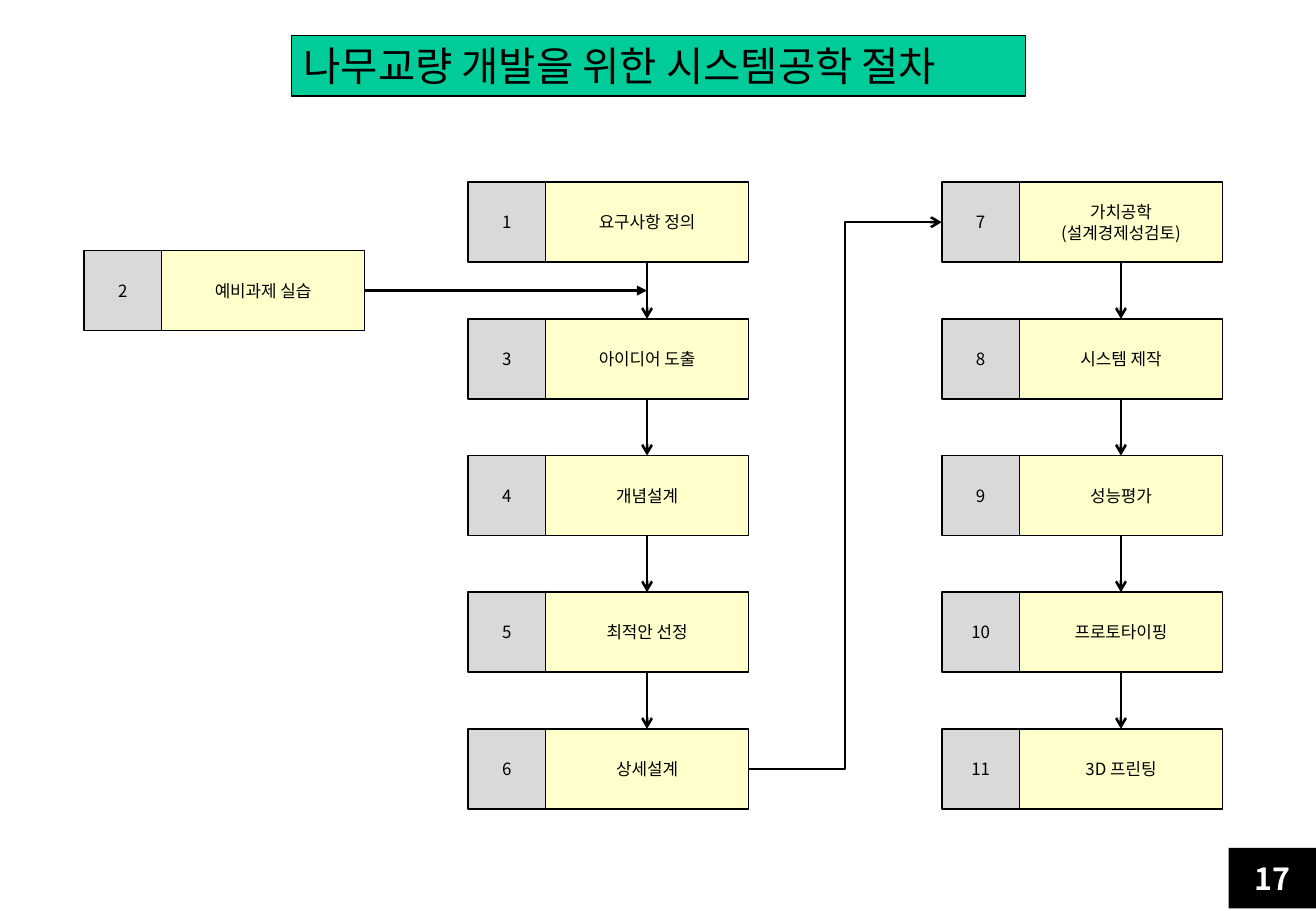
from pptx import Presentation
from pptx.dml.color import RGBColor
from pptx.enum.shapes import MSO_CONNECTOR, MSO_SHAPE
from pptx.enum.text import MSO_ANCHOR, PP_ALIGN
from pptx.oxml.ns import qn
from pptx.util import Inches, Pt
from lxml.etree import SubElement

COLORS = {"black": "000000", "white": "FFFFFF", "title": "00CC99",
          "label": "FFFFCC", "number": "D9D9D9"}
FONT = "Noto Sans CJK KR"

presentation = Presentation()
presentation.slide_width = Inches(10.83)
presentation.slide_height = Inches(7.5)
slide = presentation.slides.add_slide(presentation.slide_layouts[6])


def add_box(kind, left, top, width, height, lines, fill, size,
            line_width=None, margins=(0.1, 0.05), color="black",
            bold=False, align=PP_ALIGN.CENTER):
    shape = slide.shapes.add_shape(kind, Inches(left), Inches(top),
                                   Inches(width), Inches(height))
    shape.shadow.inherit = False
    shape.fill.solid()
    shape.fill.fore_color.rgb = RGBColor.from_string(COLORS[fill])
    if line_width:
        shape.line.color.rgb = RGBColor.from_string(COLORS["black"])
        shape.line.width = Pt(line_width)
    else:
        shape.line.fill.background()
    frame = shape.text_frame
    frame.word_wrap = True
    frame.vertical_anchor = MSO_ANCHOR.MIDDLE
    frame.margin_left = frame.margin_right = Inches(margins[0])
    frame.margin_top = frame.margin_bottom = Inches(margins[1])
    for index, text in enumerate(lines):
        paragraph = frame.add_paragraph() if index else frame.paragraphs[0]
        paragraph.alignment = align
        run = paragraph.add_run()
        run.text = text
        run.font.size = Pt(size)
        run.font.bold = bold
        run.font.name = FONT
        run.font.color.rgb = RGBColor.from_string(COLORS[color])
        SubElement(run.font._element, qn("a:ea")).set("typeface", FONT)
    return shape


def add_arrow(kind, start, end, head="arrow"):
    connector = slide.shapes.add_connector(
        kind, *(Inches(value) for value in (*start, *end)))
    connector.line.color.rgb = RGBColor.from_string(COLORS["black"])
    connector.line.width = Pt(1.5)
    SubElement(connector.line._get_or_add_ln(), qn("a:tailEnd")).set("type", head)
    SubElement(connector._element.spPr, qn("a:effectLst"))
    return connector


# Title and page number
add_box(MSO_SHAPE.RECTANGLE, 2.4, 0.29, 6.04, 0.5,
        ["나무교량 개발을 위한 시스템공학 절차"], "title", 24,
        line_width=0.75, align=PP_ALIGN.LEFT)
add_box(MSO_SHAPE.RECTANGLE, 10.11, 6.98, 0.72, 0.5, ["17"], "black", 18,
        color="white", bold=True)

# Process steps: number, column left, row, label lines
PRACTICE_LEFT, DESIGN_LEFT, BUILD_LEFT = 0.69, 3.85, 7.75
FIRST_TOP, ROW_PITCH, STEP_HEIGHT = 1.5, 1.125, 0.66
NUMBER_WIDTH, LABEL_WIDTH = 0.64, 1.67
STEP_WIDTH = NUMBER_WIDTH + LABEL_WIDTH
steps = [
    (1, DESIGN_LEFT, 0, ["요구사항 정의"]),
    (2, PRACTICE_LEFT, 0.5, ["예비과제 실습"]),
    (3, DESIGN_LEFT, 1, ["아이디어 도출"]),
    (4, DESIGN_LEFT, 2, ["개념설계"]),
    (5, DESIGN_LEFT, 3, ["최적안 선정"]),
    (6, DESIGN_LEFT, 4, ["상세설계"]),
    (7, BUILD_LEFT, 0, ["가치공학", "(설계경제성검토)"]),
    (8, BUILD_LEFT, 1, ["시스템 제작"]),
    (9, BUILD_LEFT, 2, ["성능평가"]),
    (10, BUILD_LEFT, 3, ["프로토타이핑"]),
    (11, BUILD_LEFT, 4, ["3D 프린팅"]),
]
labels, numbers = {}, {}
for number, left, row, lines in steps:
    top = FIRST_TOP + row * ROW_PITCH
    labels[number] = add_box(
        MSO_SHAPE.FLOWCHART_PROCESS, left + NUMBER_WIDTH, top, LABEL_WIDTH,
        STEP_HEIGHT, lines, "label", 10, line_width=1, margins=(0.04, 0.04))
    numbers[number] = add_box(
        MSO_SHAPE.FLOWCHART_PROCESS, left, top, NUMBER_WIDTH, STEP_HEIGHT,
        [str(number)], "number", 10, line_width=1, margins=(0, 0.04))

# Downward arrows within the two columns
for column_left, sequence in ((DESIGN_LEFT, (1, 3, 4, 5, 6)),
                              (BUILD_LEFT, (7, 8, 9, 10, 11))):
    center = column_left + NUMBER_WIDTH + LABEL_WIDTH / 2
    for row, (upper, lower) in enumerate(zip(sequence, sequence[1:])):
        top = FIRST_TOP + row * ROW_PITCH
        arrow = add_arrow(MSO_CONNECTOR.STRAIGHT, (center, top + STEP_HEIGHT),
                          (center, top + ROW_PITCH))
        arrow.begin_connect(labels[upper], 2)
        arrow.end_connect(labels[lower], 0)

# Practice step feeding the first downward arrow
first_middle = FIRST_TOP + STEP_HEIGHT / 2
practice_middle = first_middle + ROW_PITCH / 2
arrow = add_arrow(MSO_CONNECTOR.STRAIGHT,
                  (PRACTICE_LEFT + STEP_WIDTH, practice_middle),
                  (DESIGN_LEFT + NUMBER_WIDTH + LABEL_WIDTH / 2, practice_middle),
                  head="triangle")
arrow.begin_connect(labels[2], 3)

# Bent arrow from the design column to the build column
arrow = add_arrow(MSO_CONNECTOR.ELBOW,
                  (DESIGN_LEFT + STEP_WIDTH, first_middle + 4 * ROW_PITCH),
                  (BUILD_LEFT, first_middle))
arrow.begin_connect(labels[6], 3)
arrow.end_connect(numbers[7], 1)

presentation.save("out.pptx")
